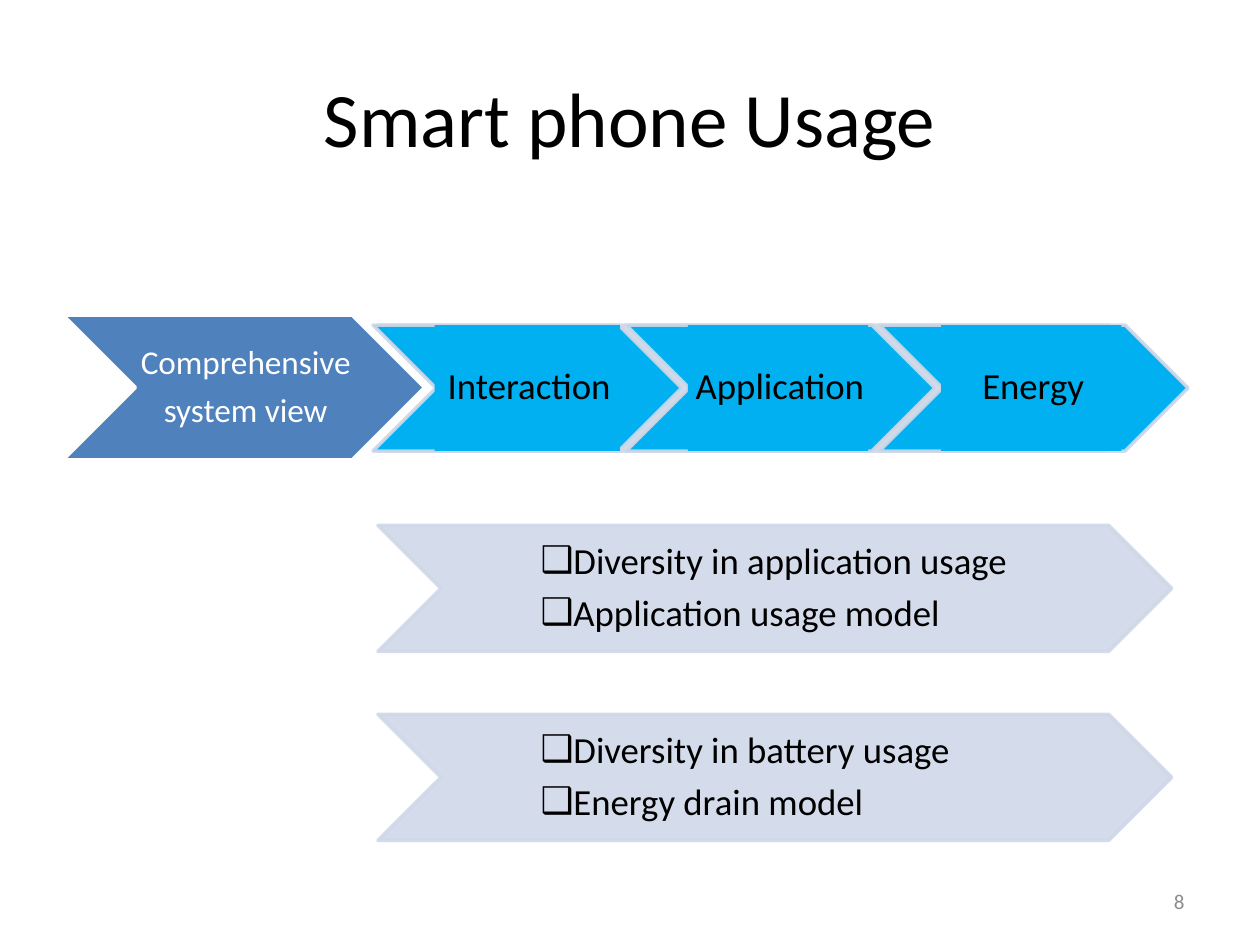
from dataclasses import dataclass

from pptx import Presentation
from pptx.dml.color import RGBColor
from pptx.enum.shapes import MSO_SHAPE
from pptx.enum.text import MSO_ANCHOR, PP_ALIGN
from pptx.oxml.ns import qn
from pptx.util import Inches, Pt
from lxml.etree import SubElement


@dataclass(frozen=True)
class Theme:
    font: str = "Calibri"
    black: str = "000000"
    white: str = "FFFFFF"
    gray: str = "8C8C8C"
    blue: str = "4F81BD"
    cyan: str = "00B0F0"
    pale: str = "D0D8E8"
    title: int = 44
    body: int = 21
    lead: int = 19
    number: int = 12
    outline: int = 2
    alpha: int = 90


T = Theme()
DETAILS = [
    (4.17, ["Diversity in application usage", "Application usage model"]),
    (5.67, ["Diversity in battery usage", "Energy drain model"]),
]
STEPS = [("Interaction", 1.47), ("Application", 1.43), ("Energy", 1.43)]


def write(tf, lines, size=T.body, color=T.black, align=PP_ALIGN.CENTER,
          bullet=None, spaced=True):
    """Fill a text frame with one paragraph for each line."""
    tf.word_wrap = True
    tf.vertical_anchor = MSO_ANCHOR.MIDDLE
    if spaced:
        tf.margin_left, tf.margin_right = Inches(0.03), 0
        tf.margin_top = tf.margin_bottom = Inches(0.01)
    for i, line in enumerate(lines):
        p = tf.add_paragraph() if i else tf.paragraphs[0]
        p.alignment = align
        if spaced:
            p.line_spacing = 0.9
            p.space_after = Pt(0.35 * size)
        if bullet:
            pPr = p._p.get_or_add_pPr()
            SubElement(pPr, qn("a:buFont"), typeface=T.font)
            SubElement(pPr, qn("a:buChar"), char=bullet)
        r = p.add_run()
        r.text = line
        r.font.name, r.font.size = T.font, Pt(size)
        r.font.color.rgb = RGBColor.from_string(color)


def paint(fill, color, alpha=None):
    fill.solid()
    fill.fore_color.rgb = RGBColor.from_string(color)
    if alpha:
        rgb = fill._xPr.find(qn("a:solidFill"))[0]
        SubElement(rgb, qn("a:alpha"), val=str(alpha * 1000))


def shape(s, kind, box, fill, line=None, fill_alpha=None, line_alpha=None):
    sp = s.shapes.add_shape(kind, *map(Inches, box))
    sp.shadow.inherit = False
    paint(sp.fill, fill, fill_alpha)
    if line:
        paint(sp.line.fill, line, line_alpha)
        sp.line.width = Pt(T.outline)
    else:
        sp.line.fill.background()
    return sp


def text(s, box, lines, **fmt):
    write(s.shapes.add_textbox(*map(Inches, box)).text_frame, lines, **fmt)


def title(s, box, caption):
    sp = s.shapes.title
    sp.left, sp.top, sp.width, sp.height = map(Inches, box)
    write(sp.text_frame, [caption], size=T.title, spaced=False)


def pale_arrow(s, box):
    shape(s, MSO_SHAPE.CHEVRON, box, T.pale, T.pale, T.alpha, T.alpha)


def detail_arrow(s, box, lines):
    """Pale chevron with a bulleted list in its middle 60 %."""
    x, y, w, h = box
    pale_arrow(s, box)
    text(s, (x + 0.2 * w, y, 0.6 * w, h), lines, align=PP_ALIGN.LEFT, bullet="❑")


def lead_arrow(s, box, lines):
    x, y, w, h = box
    shape(s, MSO_SHAPE.CHEVRON, box, T.blue, T.white)
    text(s, (x + h / 2, y, w - h, h), lines, size=T.lead, color=T.white)


def step_arrow(s, box, label, label_width):
    """Cyan chevron with a filled label panel over its middle."""
    x, y, w, h = box
    shape(s, MSO_SHAPE.CHEVRON, box, T.cyan, T.pale, line_alpha=T.alpha)
    panel = shape(s, MSO_SHAPE.RECTANGLE, (x + 0.2 * w, y, label_width, h), T.cyan)
    write(panel.text_frame, [label])


def main():
    prs = Presentation()
    prs.slide_width, prs.slide_height = Inches(10), Inches(7.5)
    s = prs.slides.add_slide(prs.slide_layouts[5])
    title(s, (0.5, 0.3, 9, 1.25), "Smart phone Usage")

    # Process row: a pale band fills the gaps between the steps
    pale_arrow(s, (3, 2.58, 6.3, 1))
    lead_arrow(s, (0.5, 2.5, 2.87, 1.15), ["Comprehensive", "system view"])
    for i, (label, width) in enumerate(STEPS):
        step_arrow(s, (2.96 + 2.01 * i, 2.58, 2.45, 1), label, width)

    # Detail rows
    for y, lines in DETAILS:
        detail_arrow(s, (3, y, 6.3, 1), lines)

    # Slide number
    text(s, (7.17, 6.95, 2.33, 0.4), ["8"], size=T.number, color=T.gray,
         align=PP_ALIGN.RIGHT, spaced=False)

    prs.save("out.pptx")


if __name__ == "__main__":
    main()
